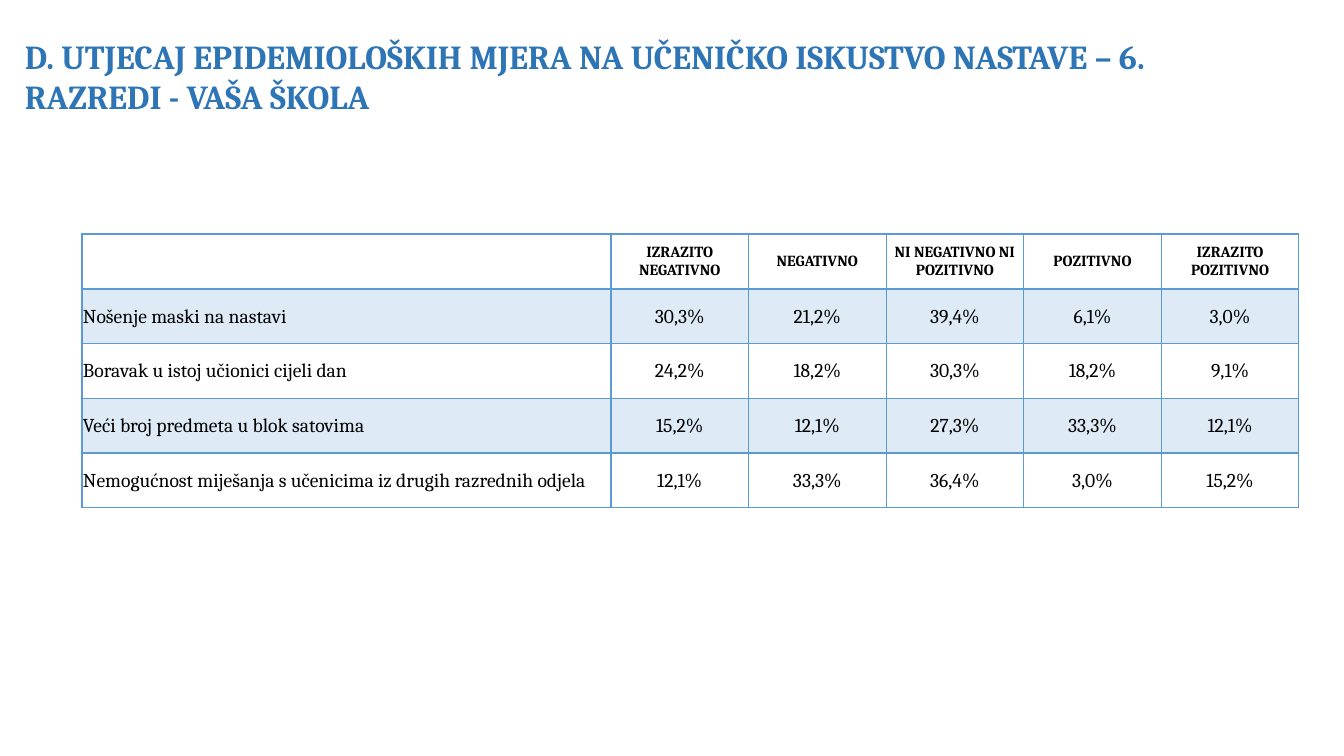
from lxml import etree
from pptx import Presentation, util as u
from pptx.dml import color
from pptx.enum import text
from pptx.oxml import ns

PX = 914400 / 100.8
BLUE, TITLE_BLUE, BLACK = "5B9BD5", "2E75B6", "000000"
RATINGS = ["IZRAZITO NEGATIVNO", "NEGATIVNO", "NI NEGATIVNO NI POZITIVNO",
           "POZITIVNO", "IZRAZITO POZITIVNO"]
MEASURES = [
    ["Nošenje maski na nastavi", "30,3%", "21,2%", "39,4%", "6,1%", "3,0%"],
    ["Boravak u istoj učionici cijeli dan", "24,2%", "18,2%", "30,3%", "18,2%", "9,1%"],
    ["Veći broj predmeta u blok satovima", "15,2%", "12,1%", "27,3%", "33,3%", "12,1%"],
    ["Nemogućnost miješanja s učenicima iz drugih razrednih odjela",
     "12,1%", "33,3%", "36,4%", "3,0%", "15,2%"],
]


def px(length):
    return u.Emu(round(length * PX))


def rgb(value):
    return color.RGBColor.from_string(value)


def write(frame, words, size=14, ink=BLACK, bold=False, align=text.PP_ALIGN.LEFT, font="Cambria"):
    paragraph = frame.paragraphs[0]
    paragraph.alignment = align
    paragraph.font.size = u.Pt(size)
    if words:
        run = paragraph.add_run()
        run.text = words
        run.font.name, run.font.size, run.font.bold = font, u.Pt(size), bold
        run.font.color.rgb = rgb(ink)


class SurveySlide:
    """Places styled titles and ruled survey tables on one slide."""

    def __init__(self, deck):
        self.slide = deck.slides.add_slide(deck.slide_layouts[6])
        self.rule, self.tint, self.opacity = BLUE, BLUE, 20

    def title(self, words, left, top, width, height):
        frame = self.slide.shapes.add_textbox(*map(px, (left, top, width, height))).text_frame
        frame.word_wrap = True
        frame.auto_size = text.MSO_AUTO_SIZE.SHAPE_TO_FIT_TEXT
        write(frame, words, size=24, ink=TITLE_BLUE, bold=True)

    def table(self, rows, left, top, width, height, label_width):
        grid = self.slide.shapes.add_table(
            len(rows), len(rows[0]), *map(px, (left, top, width, height))).table
        grid.first_row = grid.horz_banding = False
        for index, column in enumerate(grid.columns):
            column.width = px((width - label_width) / (len(rows[0]) - 1) if index else label_width)
        for r, row in enumerate(rows):
            for c, words in enumerate(row):
                self.cell(grid.cell(r, c), words, r, c)

    def cell(self, cell, words, r, c):
        cell.margin_left = cell.margin_right = cell.margin_top = px(1)
        cell.margin_bottom = 0
        cell.vertical_anchor = text.MSO_ANCHOR.MIDDLE
        write(cell.text_frame, words, size=14 if r else 11, bold=r == 0,
              align=text.PP_ALIGN.CENTER if c else text.PP_ALIGN.LEFT)
        self.borders(cell, top=2 if r == 1 else 1, bottom=1 if r else 2)
        if r % 2:
            self.shade(cell)
        else:
            cell.fill.background()

    def borders(self, cell, top, bottom):
        properties = cell._tc.get_or_add_tcPr()
        for side, points in (("L", 1), ("R", 1), ("T", top), ("B", bottom)):
            line = etree.SubElement(properties, ns.qn(f"a:ln{side}"), w=str(u.Pt(points)))
            solid = etree.SubElement(line, ns.qn("a:solidFill"))
            etree.SubElement(solid, ns.qn("a:srgbClr"), val=self.rule)

    def shade(self, cell):
        cell.fill.solid()
        cell.fill.fore_color.rgb = rgb(self.tint)
        tint = cell._tc.tcPr.find(f"{ns.qn('a:solidFill')}/{ns.qn('a:srgbClr')}")
        etree.SubElement(tint, ns.qn("a:alpha"), val=str(self.opacity * 1000))


def main():
    deck = Presentation()
    deck.slide_width, deck.slide_height = px(1344), px(756)
    survey = SurveySlide(deck)
    survey.title("D. UTJECAJ EPIDEMIOLOŠKIH MJERA NA UČENIČKO ISKUSTVO NASTAVE – 6. "
                 "RAZREDI - VAŠA ŠKOLA", 15, 31, 1258, 92)
    survey.table([["", *RATINGS], *MEASURES], 82, 234, 1217, 274, label_width=529)
    deck.save("out.pptx")


if __name__ == "__main__":
    main()
